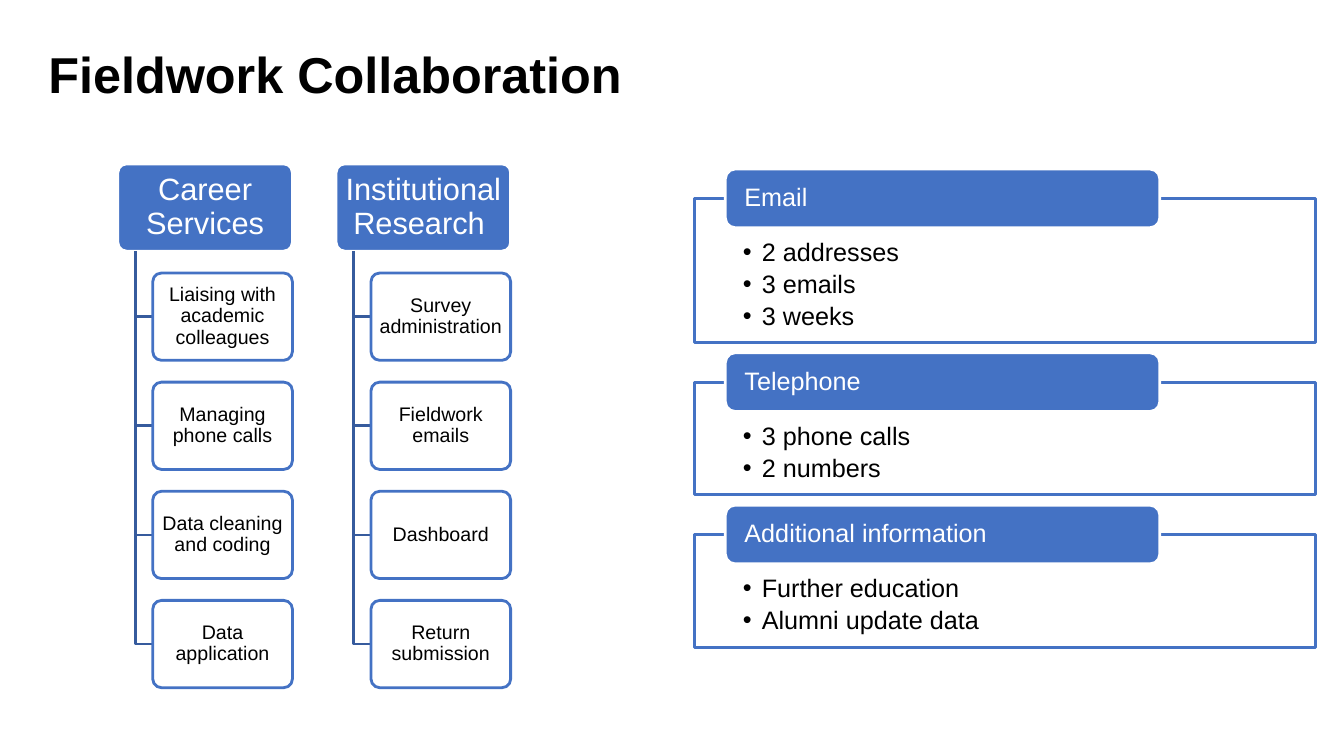
from pptx import Presentation
from pptx.dml.color import RGBColor as RGB
from pptx.enum.shapes import MSO_SHAPE as Shape
from pptx.enum.text import MSO_ANCHOR as Anchor, PP_ALIGN as Align
from pptx.oxml.ns import qn
from pptx.util import Cm, Pt
from lxml.etree import SubElement as Sub

HUES = {"blue": "4472C4", "navy": "365B9D", "white": "FFFFFF", "black": "000000"}

TEAMS = [
    ("Career Services", ["Liaising with academic colleagues", "Managing phone calls",
                         "Data cleaning and coding", "Data application"]),
    ("Institutional Research ", ["Survey administration", "Fieldwork emails",
                                 "Dashboard", "Return submission"]),
]
MODES = [
    ("Email", ["2 addresses", "3 emails", "3 weeks"]),
    ("Telephone", ["3 phone calls", "2 numbers"]),
    ("Additional information", ["Further education", "Alumni update data"]),
]


class Deck:
    """Holds the style and the current slide, and draws each kind of element."""

    def __init__(self, wide, high):
        self.prs = Presentation()
        self.put(self.prs, slide_width=Cm(wide), slide_height=Cm(high))
        self.page = self.prs.slides.add_slide(self.prs.slide_layouts[6])
        self.face = "Arial"

    def put(self, item, **vals):
        for name, val in vals.items():
            setattr(item, name, val)

    def hue(self, name):
        return RGB.from_string(HUES[name])

    def edge(self, item, tint):
        item.shadow.inherit = False
        item.line.color.rgb = self.hue(tint)
        item.line.width = Pt(2)

    def text(self, item, lines, size, tint, pads, align=Align.LEFT,
             anchor=Anchor.MIDDLE, bold=False, dots=False):
        frame = item.text_frame
        left, top, right, base = map(Cm, pads)
        self.put(frame, word_wrap=True, vertical_anchor=anchor, margin_left=left,
                 margin_top=top, margin_right=right, margin_bottom=base)
        for i, line in enumerate(lines):
            para = frame.add_paragraph() if i else frame.paragraphs[0]
            self.put(para, alignment=align, line_spacing=0.9)
            if dots:
                para.space_after = Pt(3.5)
                props = para._p.get_or_add_pPr()
                props.set("marL", str(Cm(0.48)))
                props.set("indent", str(Cm(-0.48)))
                Sub(props, qn("a:buFont")).set("typeface", self.face)
                Sub(props, qn("a:buChar")).set("char", "•")
            run = para.add_run()
            run.text = line
            self.put(run.font, name=self.face, size=Pt(size), bold=bold)
            run.font.color.rgb = self.hue(tint)

    def title(self, box, words):
        item = self.page.shapes.add_textbox(*map(Cm, box))
        self.text(item, [words], 36, "black", (0.25, 0.13, 0.25, 0.13), bold=True)

    def box(self, kind, box, fill, line, clear=False, curve=None):
        item = self.page.shapes.add_shape(kind, *map(Cm, box))
        item.fill.solid()
        item.fill.fore_color.rgb = self.hue(fill)
        if clear:
            tone = item.fill._xPr.find(".//" + qn("a:srgbClr"))
            Sub(tone, qn("a:alpha")).set("val", "90000")
        if curve:
            item.adjustments[0] = curve
        self.edge(item, line)
        return item

    def elbow(self, x, y, far, low):
        path = self.page.shapes.build_freeform(Cm(x), Cm(y))
        path.add_line_segments([(Cm(x), Cm(low)), (Cm(far), Cm(low))], close=False)
        item = path.convert_to_shape()
        item.fill.background()
        self.edge(item, "navy")

    def team(self, x, y, name, tasks):
        high, step = 2.2, 2.75
        head = self.box(Shape.ROUNDED_RECTANGLE, (x, y, 4.4, high), "blue", "white", curve=0.1)
        self.text(head, [name], 22, "white", (0.12, 0.08, 0.12, 0.08), Align.CENTER)
        for i, task in enumerate(tasks, 1):
            top = y + i * step
            self.elbow(x + 0.44, y + high, x + 0.88, top + high / 2)
            node = self.box(Shape.ROUNDED_RECTANGLE, (x + 0.88, top, 3.52, high),
                            "white", "blue", True, 0.1)
            self.text(node, [task], 14, "black", (0.07, 0.05, 0.07, 0.05), Align.CENTER)

    def mode(self, x, y, name, facts):
        high = 1.26 + 0.79 * len(facts)
        panel = self.box(Shape.RECTANGLE, (x, y, 15.65, high), "white", "blue", True)
        self.text(panel, facts, 18, "black", (1.22, 1.04, 1.22, 0.36),
                  anchor=Anchor.TOP, dots=True)
        tab = self.box(Shape.ROUNDED_RECTANGLE, (x + 0.78, y - 0.74, 10.95, 1.48),
                       "blue", "white")
        self.text(tab, [name], 18, "white", (0.41, 0, 0.41, 0))
        return y + high + 1


def main():
    deck = Deck(33.87, 19.05)
    deck.title((0.97, 0.66, 28.65, 2.59), "Fieldwork Collaboration")
    for i, (name, tasks) in enumerate(TEAMS):
        deck.team(2.97 + 5.5 * i, 4.13, name, tasks)
    y = 5
    for name, facts in MODES:
        y = deck.mode(17.5, y, name, facts)
    deck.prs.save("out.pptx")


if __name__ == "__main__":
    main()
